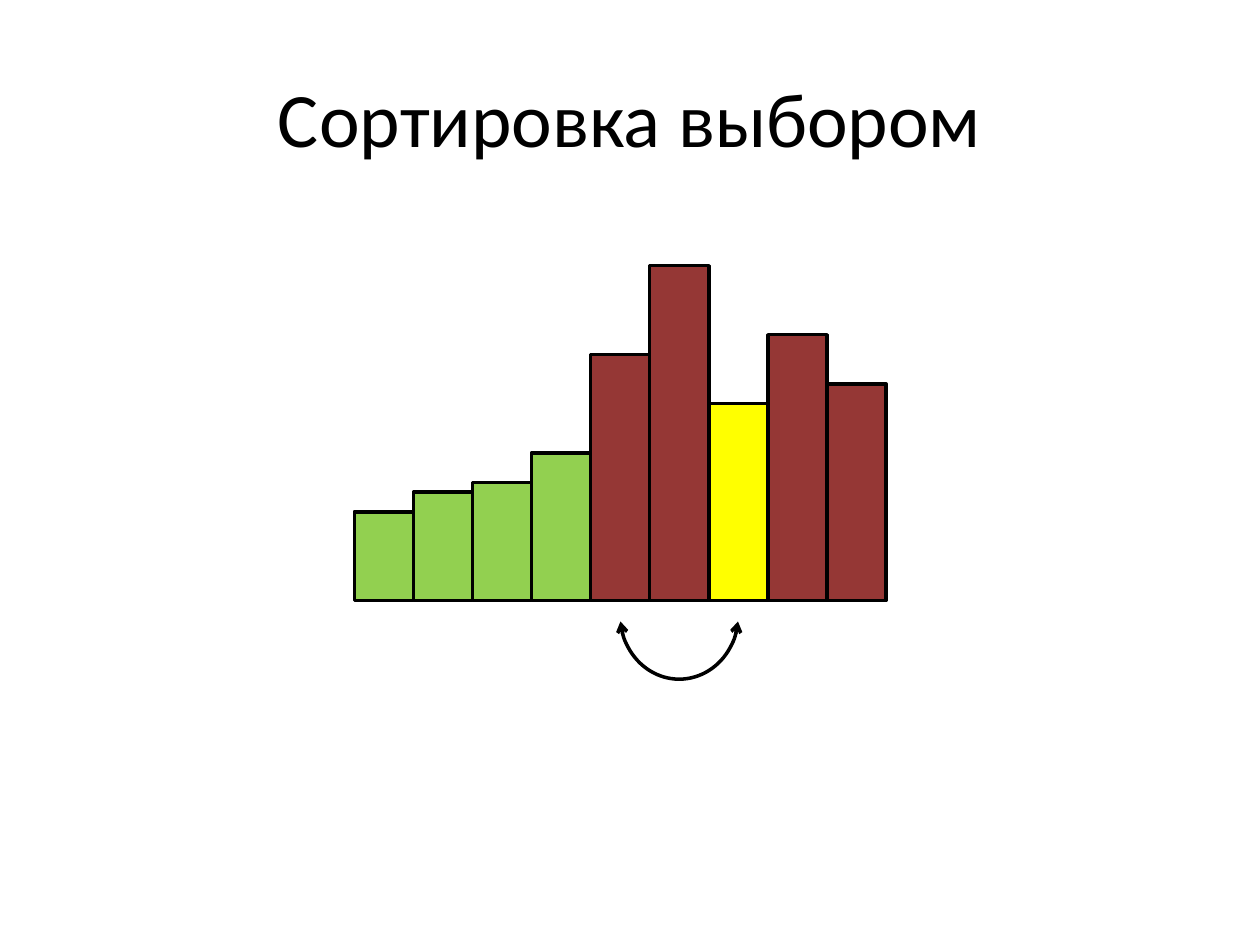
from lxml.etree import SubElement
from pptx import Presentation
from pptx.dml.color import RGBColor
from pptx.enum.shapes import MSO_SHAPE as Shape
from pptx.enum.text import MSO_ANCHOR as Anchor, PP_ALIGN as Align
from pptx.oxml.ns import qn
from pptx.util import Pt

BLACK = RGBColor(0x00, 0x00, 0x00)
SORTED = RGBColor(0x92, 0xD0, 0x50)
UNSORTED = RGBColor(0x95, 0x37, 0x35)
MINIMUM = RGBColor(0xFF, 0xFF, 0x00)

# Content
TITLE = "Сортировка выбором"
VALUES = [9, 11, 12, 15, 25, 34, 20, 27, 22]
SORTED_COUNT = 4
MIN_INDEX = 6

# Layout in px, 128 to the inch
PX = 914400 // 128
SLIDE_W, SLIDE_H = 1280, 960
BARS_LEFT, BASELINE = 360, 610
BAR_W, UNIT_H = 60, 10
SWAP_TOP, SWAP_H = 560, 130
SWAP_ANGLES = (3.67, 104.32)


def px(*lengths):
    return [length * PX for length in lengths]


def add_text(slide, text, box, *, size, color=BLACK, font="Calibri",
             align=Align.CENTER, anchor=Anchor.MIDDLE):
    frame = slide.shapes.add_textbox(*px(*box)).text_frame
    frame.word_wrap = True
    frame.vertical_anchor = anchor
    paragraph = frame.paragraphs[0]
    paragraph.alignment = align
    run = paragraph.add_run()
    run.text = text
    run.font.name = font
    run.font.size = Pt(size)
    run.font.color.rgb = color


def add_outlined(slide, kind, box, fill=None):
    shape = slide.shapes.add_shape(kind, *px(*box))
    shape.shadow.inherit = False
    if fill is None:
        shape.fill.background()
    else:
        shape.fill.solid()
        shape.fill.fore_color.rgb = fill
    shape.line.color.rgb = BLACK
    shape.line.width = Pt(2)
    return shape


def bar_color(index):
    if index < SORTED_COUNT:
        return SORTED
    return MINIMUM if index == MIN_INDEX else UNSORTED


def main():
    prs = Presentation()
    prs.slide_width, prs.slide_height = px(SLIDE_W, SLIDE_H)
    slide = prs.slides.add_slide(prs.slide_layouts[6])

    add_text(slide, TITLE, (64, 38, 1152, 160), size=44)

    # Bars standing on a common baseline
    for index, value in enumerate(VALUES):
        height = value * UNIT_H
        box = (BARS_LEFT + index * BAR_W, BASELINE - height, BAR_W, height)
        add_outlined(slide, Shape.RECTANGLE, box, bar_color(index))

    # Swap arc from the first unsorted bar to the minimum, centre to centre
    swap_left = BARS_LEFT + SORTED_COUNT * BAR_W + BAR_W // 2
    swap_w = (MIN_INDEX - SORTED_COUNT) * BAR_W
    swap = add_outlined(slide, Shape.ARC, (swap_left, SWAP_TOP, swap_w, SWAP_H))
    swap.adjustments[0], swap.adjustments[1] = SWAP_ANGLES
    outline = swap.line._get_or_add_ln()
    for end in ("a:headEnd", "a:tailEnd"):
        SubElement(outline, qn(end), type="arrow")

    prs.save("out.pptx")


if __name__ == "__main__":
    main()
